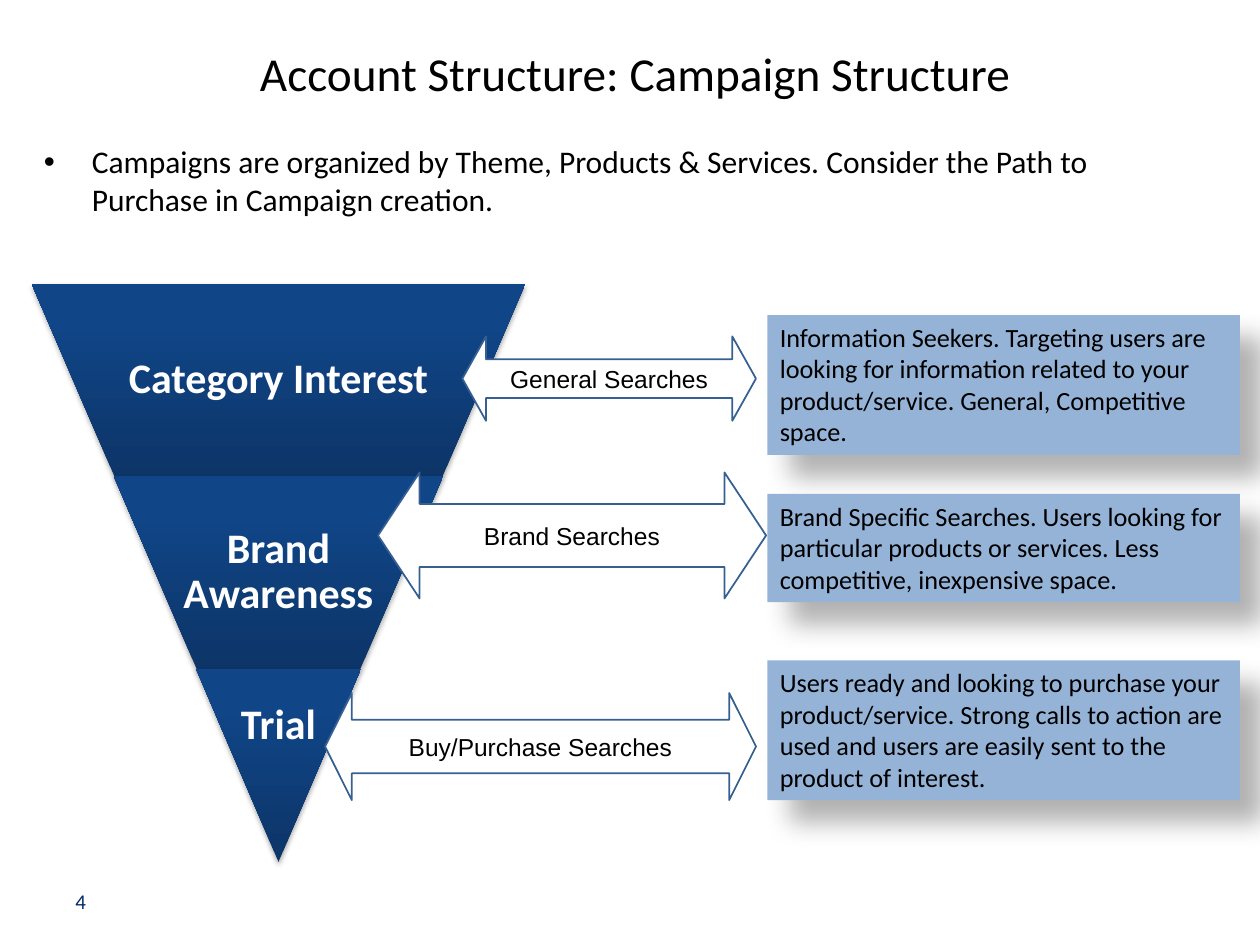
from lxml import etree
from pptx import Presentation
from pptx import util as u
from pptx.dml import color
from pptx.enum import shapes, text
from pptx.oxml import ns, parse_xml

MIDDLE, TOP = text.MSO_ANCHOR.MIDDLE, text.MSO_ANCHOR.TOP
CENTER = text.PP_ALIGN.CENTER


def rgb(value):
    return color.RGBColor.from_string(value)


class SlideBuilder:
    black, white, navy = "000000", "FFFFFF", "002C69"
    outline, panel = "376092", "95B3D7"
    gradient = ((0, "0D3568"), (80, "104587"), (100, "0E458A"))

    def __init__(self, slide):
        self.slide = slide

    def add_words(self, shape, words, size, ink=black, font="Calibri", bold=False,
                  align=None, anchor=TOP, insets=(0.1, 0.05, 0.1, 0.05)):
        """Fill the shape with one styled paragraph and return it."""
        frame = shape.text_frame
        frame.word_wrap = True
        frame.vertical_anchor = anchor
        (frame.margin_left, frame.margin_top,
         frame.margin_right, frame.margin_bottom) = map(u.Inches, insets)
        paragraph = frame.paragraphs[0]
        paragraph.alignment = align or text.PP_ALIGN.LEFT
        run = paragraph.add_run()
        run.text = words
        run.font.name, run.font.size, run.font.bold = font, u.Pt(size), bold
        run.font.color.rgb = rgb(ink)
        return paragraph

    def textbox(self, box, words, size, **style):
        shape = self.slide.shapes.add_textbox(*map(u.Inches, box))
        return self.add_words(shape, words, size, **style)

    def bullet(self, box, words, size):
        paragraph = self.textbox(box, words, size)
        paragraph.space_before = u.Pt(size * 0.2)
        properties = paragraph._p.get_or_add_pPr()
        properties.set("marL", str(u.Inches(0.38)))
        properties.set("indent", str(-u.Inches(0.38)))
        etree.SubElement(properties, ns.qn("a:buFont"), typeface="Arial")
        etree.SubElement(properties, ns.qn("a:buChar"), char="•")

    def shape(self, kind, box, fill, line=None):
        shape = self.slide.shapes.add_shape(kind, *map(u.Inches, box))
        shape.shadow.inherit = False
        shape.fill.solid()
        shape.fill.fore_color.rgb = rgb(fill)
        if line:
            shape.line.color.rgb = rgb(line)
            shape.line.width = u.Pt(1)
        else:
            shape.line.fill.background()
        return shape

    def add_shadow(self, shape, opacity, blur, distance, angle):
        effects = shape._element.spPr.find(ns.qn("a:effectLst"))
        shadow = etree.SubElement(
            effects, ns.qn("a:outerShdw"), blurRad=str(u.Pt(blur)),
            dist=str(u.Pt(distance)), dir=str(angle * 60000), rotWithShape="0")
        tint = etree.SubElement(shadow, ns.qn("a:srgbClr"), val=self.black)
        etree.SubElement(tint, ns.qn("a:alpha"), val=str(opacity * 1000))

    def funnel_level(self, box, slant, label_box, label, bottom_inset):
        shape = self.shape(shapes.MSO_SHAPE.TRAPEZOID, box, self.navy)
        shape.adjustments[0] = slant
        shape.rotation = 180
        stops = "".join(f'<a:gs pos="{place * 1000}"><a:srgbClr val="{tint}"/></a:gs>'
                        for place, tint in self.gradient)
        solid = shape._element.spPr.find(ns.qn("a:solidFill"))
        solid.getparent().replace(solid, parse_xml(
            f'<a:gradFill {ns.nsdecls("a")} rotWithShape="0"><a:gsLst>{stops}</a:gsLst>'
            '<a:lin ang="16200000" scaled="0"/></a:gradFill>'))
        self.add_shadow(shape, 35, 3.1, 1.8, 90)
        paragraph = self.textbox(label_box, label, 24, ink=self.white, bold=True,
                                 align=CENTER, anchor=MIDDLE,
                                 insets=(0.03, 0.03, 0.03, bottom_inset))
        paragraph.line_spacing = 0.9

    def arrow(self, box, adjustments, words):
        shape = self.shape(shapes.MSO_SHAPE.LEFT_RIGHT_ARROW, box, self.white, self.outline)
        for index, value in enumerate(adjustments):
            shape.adjustments[index] = value
        self.add_words(shape, words, 14, font="Arial", align=CENTER, anchor=MIDDLE,
                       insets=(0.1,) * 4)

    def description(self, box, words):
        shape = self.shape(shapes.MSO_SHAPE.RECTANGLE, box, self.panel)
        self.add_shadow(shape, 30, 15, 18, 45)
        self.add_words(shape, words, 15)


def main():
    presentation = Presentation()
    presentation.slide_width, presentation.slide_height = u.Inches(10), u.Inches(7.5)
    builder = SlideBuilder(presentation.slides.add_slide(presentation.slide_layouts[6]))

    builder.textbox((0.5, 6.95, 2.33, 0.4), "4", 12, ink=builder.navy, anchor=MIDDLE)
    builder.textbox((0.33, 0.33, 9.42, 0.5), "Account Structure: Campaign Structure",
                    27, align=CENTER, anchor=MIDDLE)
    builder.bullet((0.25, 1.08, 9.08, 0.83),
                   "Campaigns are organized by Theme, Products & Services. "
                   "Consider the Path to Purchase in Campaign creation.", 18)

    level_height, funnel_width, funnel_left, funnel_top = 1.53, 3.92, 0.25, 2.25
    step = funnel_width / 6
    levels = (("Category Interest", 0.43, 2.55, 0.03),
              ("Brand Awareness", 0.43, 1.7, 0.03),
              ("Trial", 0.5, 1.31, 0.65))
    for index, (label, slant, label_width, bottom_inset) in enumerate(levels):
        top = funnel_top + index * level_height
        label_left = funnel_left + (funnel_width - label_width) / 2
        builder.funnel_level(
            (funnel_left + index * step, top, funnel_width - 2 * index * step, level_height),
            slant, (label_left, top, label_width, level_height), label, bottom_inset)

    searches = (
        ((3.67, 2.67, 2.33, 0.67), (0.46, 0.28), "General Searches"),
        ((3, 3.75, 3.08, 1), (0.5, 0.33), "Brand Searches"),
        ((2.58, 5.5, 3.42, 0.85), (0.5, 0.25), "Buy/Purchase Searches"))
    for box, adjustments, words in searches:
        builder.arrow(box, adjustments, words)

    descriptions = (
        (2.5, 1.11, "Information Seekers. Targeting users are looking for information "
                    "related to your product/service. General, Competitive space."),
        (3.92, 0.86, "Brand Specific Searches. Users looking for particular products "
                     "or services. Less competitive, inexpensive space."),
        (5.24, 1.11, "Users ready and looking to purchase your product/service. "
                     "Strong calls to action are used and users are easily sent "
                     "to the product of interest."))
    for top, height, words in descriptions:
        builder.description((6.09, top, 3.75, height), words)

    presentation.save("out.pptx")


if __name__ == "__main__":
    main()
